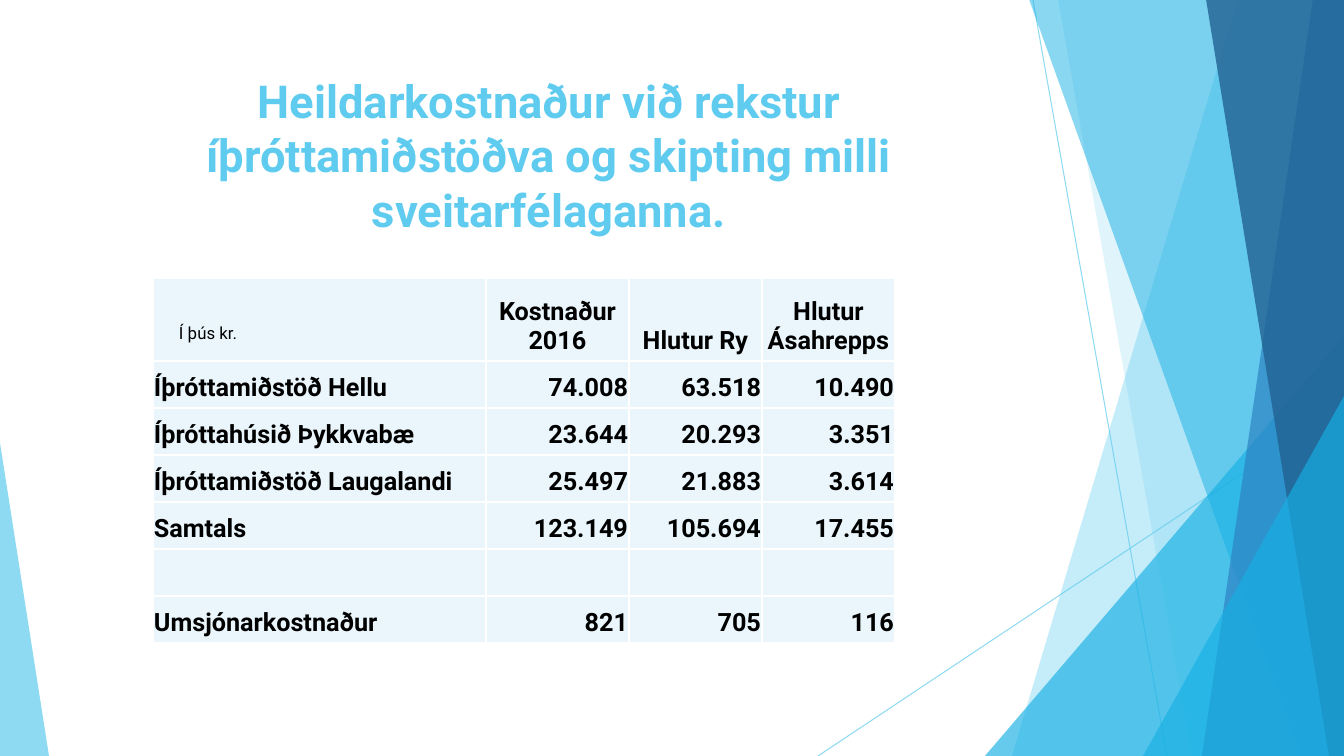
from lxml import etree
from pptx import Presentation
from pptx import util as u
from pptx.dml.color import RGBColor
from pptx.enum import shapes, text
from pptx.oxml.ns import qn

PX = 914400 / 100.8
WIDTH, HEIGHT = 1344, 756
COLORS = {
    "sky": "5FCBEF",
    "cyan": "17B0E4",
    "blue": "2E83C3",
    "navy": "226292",
    "cell": "EAF6FC",
    "white": "FFFFFF",
    "black": "000000",
}
LEFT, CENTER, RIGHT = text.PP_ALIGN.LEFT, text.PP_ALIGN.CENTER, text.PP_ALIGN.RIGHT


def px(*values):
    return [u.Emu(round(value * PX)) for value in values]


class SlideBuilder:
    """Holds the font and the current slide, and draws elements on it."""

    def __init__(self, slide, font="Roboto"):
        self.slide = slide
        self.font = font

    def set_alpha(self, properties, percent):
        color = next(properties.iter(qn("a:srgbClr")))
        etree.SubElement(color, qn("a:alpha"), val=str(percent * 1000))

    def paint(self, shape, color, alpha):
        shape.shadow.inherit = False
        shape.fill.solid()
        shape.fill.fore_color.rgb = RGBColor.from_string(COLORS[color])
        self.set_alpha(shape._element.spPr, alpha)
        shape.line.fill.background()

    def line(self, x1, y1, x2, y2, color, alpha):
        connector = self.slide.shapes.add_connector(
            shapes.MSO_CONNECTOR.STRAIGHT, *px(x1, y1, x2, y2))
        connector.line.width = u.Pt(0.75)
        connector.line.color.rgb = RGBColor.from_string(COLORS[color])
        self.set_alpha(connector._element.spPr, alpha)
        etree.SubElement(connector._element.spPr, qn("a:effectLst"))

    def panel(self, top_x, bottom_x, color, alpha):
        """Full-height panel with a slanted left side, ending at the right edge."""
        builder = self.slide.shapes.build_freeform(top_x, -1, scale=PX)
        builder.add_line_segments([(WIDTH, -1), (WIDTH, HEIGHT), (bottom_x, HEIGHT)])
        self.paint(builder.convert_to_shape(), color, alpha)

    def triangle(self, left, top, width, apex, color, alpha):
        """Triangle standing on the bottom edge."""
        shape = self.slide.shapes.add_shape(
            shapes.MSO_SHAPE.ISOSCELES_TRIANGLE, *px(left, top, width, HEIGHT - top))
        shape.adjustments[0] = apex
        self.paint(shape, color, alpha)

    def set_text(self, frame, content, size, color, bold=False, align=LEFT):
        frame.text = content
        frame.word_wrap = True
        paragraph = frame.paragraphs[0]
        paragraph.alignment = align
        for run in paragraph.runs:
            run.font.name = self.font
            run.font.size = u.Pt(size)
            run.font.bold = bold
            run.font.color.rgb = RGBColor.from_string(COLORS[color])

    def textbox(self, left, top, width, height, content, size, color, **style):
        shape = self.slide.shapes.add_textbox(*px(left, top, width, height))
        self.set_text(shape.text_frame, content, size, color, **style)

    def cell_borders(self, cell, color):
        properties = cell._tc.get_or_add_tcPr()
        for index, side in enumerate(("a:lnL", "a:lnR", "a:lnT", "a:lnB")):
            border = etree.Element(qn(side), w=str(u.Pt(1)))
            fill = etree.SubElement(border, qn("a:solidFill"))
            etree.SubElement(fill, qn("a:srgbClr"), val=COLORS[color])
            properties.insert(index, border)

    def table(self, left, top, widths, heights, rows):
        frame = self.slide.shapes.add_table(
            len(rows), len(widths), *px(left, top, sum(widths), sum(heights)))
        table = frame.table
        for column, width in zip(table.columns, px(*widths)):
            column.width = width
        for row, height in zip(table.rows, px(*heights)):
            row.height = height
        for row_index, row in enumerate(rows):
            for column_index, content in enumerate(row):
                cell = table.cell(row_index, column_index)
                cell.fill.solid()
                cell.fill.fore_color.rgb = RGBColor.from_string(COLORS["cell"])
                self.cell_borders(cell, "white")
                if not content:
                    continue
                cell.vertical_anchor = text.MSO_ANCHOR.BOTTOM
                (cell.margin_left, cell.margin_top,
                 cell.margin_right, cell.margin_bottom) = px(1, 1, 1, 5)
                align = CENTER if row_index == 0 else RIGHT if column_index else LEFT
                self.set_text(cell.text_frame, content, 18, "black", bold=True, align=align)


def main():
    presentation = Presentation()
    presentation.slide_width, presentation.slide_height = px(WIDTH, HEIGHT)
    builder = SlideBuilder(presentation.slides.add_slide(presentation.slide_layouts[6]))

    # Background facets, back to front
    builder.line(1033, 0, 1167, HEIGHT, "sky", 70)
    builder.line(WIDTH, 406, 818, HEIGHT, "sky", 70)
    builder.panel(1238, 1012, "sky", 36)
    builder.panel(1058, 1192, "sky", 20)
    builder.triangle(985, 336, 359, 1, "cyan", 66)
    builder.panel(1029, 1301, "cyan", 50)
    builder.panel(1313, 1202, "blue", 70)
    builder.panel(1206, 1329, "navy", 80)
    builder.triangle(1143, 396, 201, 1, "cyan", 66)
    builder.triangle(0, 443, 49, 0, "sky", 70)

    # Title
    builder.textbox(
        75, 68, 948, 145,
        "Heildarkostnaður við rekstur íþróttamiðstöðva og skipting milli sveitarfélaganna.",
        32.4, "sky", bold=True, align=CENTER)

    # Cost table with its unit label
    rows = [
        ("", "Kostnaður 2016", "Hlutur Ry", "Hlutur Ásahrepps"),
        ("Íþróttamiðstöð Hellu", "74.008", "63.518", "10.490"),
        ("Íþróttahúsið Þykkvabæ", "23.644", "20.293", "3.351"),
        ("Íþróttamiðstöð Laugalandi", "25.497", "21.883", "3.614"),
        ("Samtals", "123.149", "105.694", "17.455"),
        ("", "", "", ""),
        ("Umsjónarkostnaður", "821", "705", "116"),
    ]
    builder.table(153, 278, [333, 143, 133, 133], [83] + [47] * 6, rows)
    builder.textbox(169, 318, 301, 30, "Í þús kr.", 12, "black")

    presentation.save("out.pptx")


if __name__ == "__main__":
    main()
